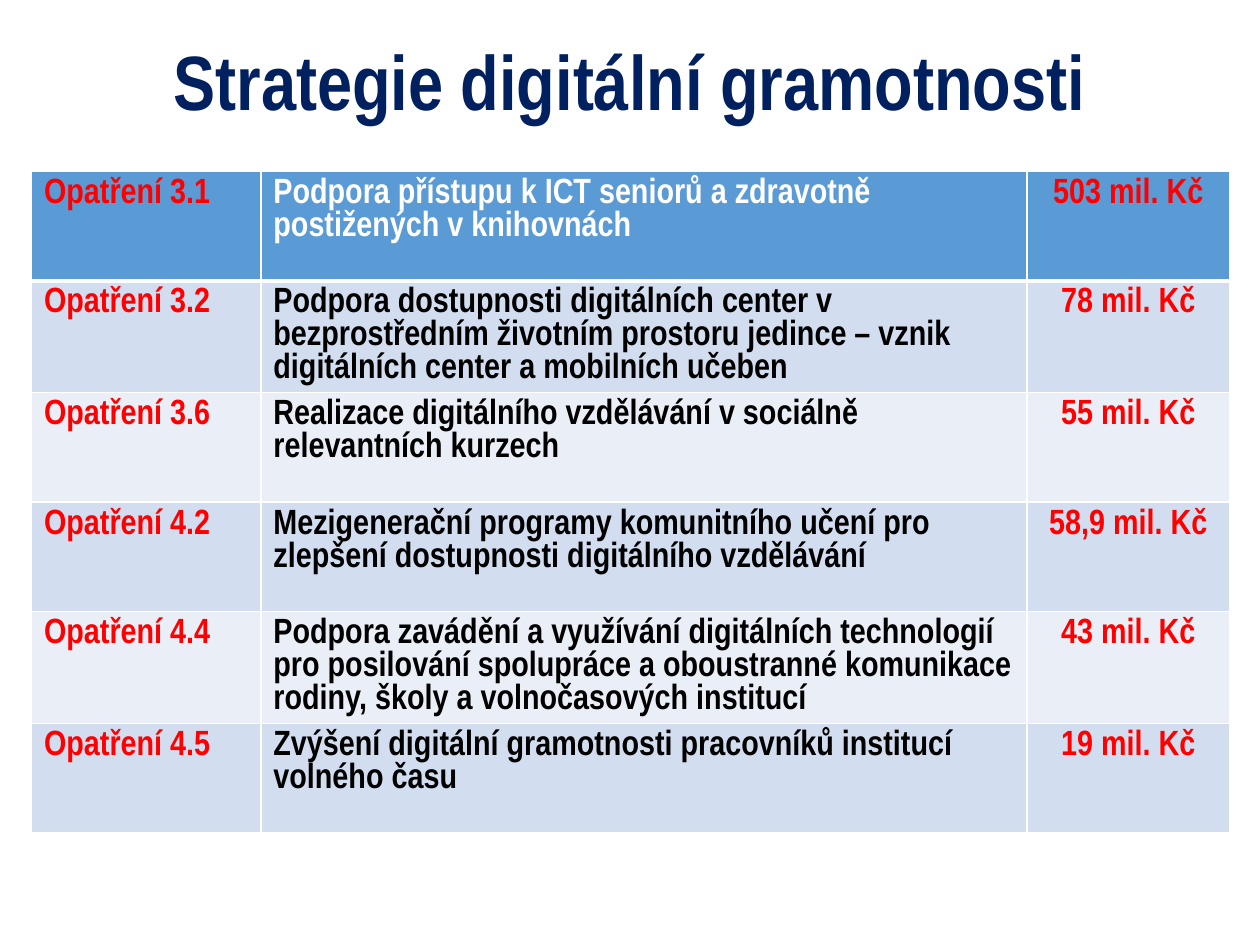
from lxml import etree
from pptx import Presentation
from pptx import util as u
from pptx.dml.color import RGBColor
from pptx.enum import text
from pptx.oxml import ns

WIDTH, HEIGHT = u.Inches(10), u.Inches(7.5)
FONT = "Arial Narrow"
NAVY = RGBColor(0x00, 0x20, 0x60)
RED = RGBColor(0xFF, 0x00, 0x00)
WHITE = RGBColor(0xFF, 0xFF, 0xFF)
BLACK = RGBColor(0x00, 0x00, 0x00)
HEADER = RGBColor(0x5B, 0x9B, 0xD5)
BANDS = (RGBColor(0xEA, 0xEF, 0xF7), RGBColor(0xD2, 0xDE, 0xEF))
COLUMN_SHARES = (0.1914, 0.6393, 0.1693)

TITLE = "Strategie digitální gramotnosti"
MEASURES = (
    ("Opatření 3.1", "Podpora přístupu k ICT seniorů a zdravotně postižených v knihovnách", "503 mil. Kč"),
    ("Opatření 3.2", "Podpora dostupnosti digitálních center v bezprostředním životním prostoru jedince – vznik digitálních center a mobilních učeben", "78 mil. Kč"),
    ("Opatření 3.6", "Realizace digitálního vzdělávání v sociálně relevantních kurzech", "55 mil. Kč"),
    ("Opatření 4.2", "Mezigenerační programy komunitního učení pro zlepšení dostupnosti digitálního vzdělávání", "58,9 mil. Kč"),
    ("Opatření 4.4", "Podpora zavádění a využívání digitálních technologií pro posilování spolupráce a oboustranné komunikace rodiny, školy a volnočasových institucí", "43 mil. Kč"),
    ("Opatření 4.5", "Zvýšení digitální gramotnosti pracovníků institucí volného času", "19 mil. Kč"),
)


def share_box(left, top, width, height):
    """Turn shares of the slide's size into a box of lengths."""
    return int(left * WIDTH), int(top * HEIGHT), int(width * WIDTH), int(height * HEIGHT)


def write(para, words, size, color, align):
    """Add one bold run to an aligned paragraph."""
    para.alignment = align
    span = para.add_run()
    span.text = words
    span.font.name = FONT
    span.font.size = u.Pt(size)
    span.font.bold = True
    span.font.color.rgb = color


def set_borders(cell, widths):
    """Draw white cell borders of the given widths in points, by side."""
    properties = cell._tc.get_or_add_tcPr()
    for side, width in widths.items():
        line = etree.SubElement(properties, ns.qn(f"a:ln{side}"), w=str(u.Pt(width)))
        fill = etree.SubElement(line, ns.qn("a:solidFill"))
        etree.SubElement(fill, ns.qn("a:srgbClr"), val=str(WHITE))


def place_title(page, box):
    """Move the title placeholder into the box and fill it."""
    title = page.shapes.title
    title.left, title.top, title.width, title.height = box
    frame = title.text_frame
    frame.word_wrap = True
    frame.vertical_anchor = text.MSO_ANCHOR.MIDDLE
    para = frame.paragraphs[0]
    para.line_spacing = 0.9
    write(para, TITLE, 44, NAVY, text.PP_ALIGN.CENTER)


def place_measures(page, box):
    """Fill the box with the table of measures and their budgets."""
    table = page.shapes.add_table(len(MEASURES), len(COLUMN_SHARES), *box).table
    for column, share in zip(table.columns, COLUMN_SHARES):
        column.width = int(box[2] * share)
    aligns = (text.PP_ALIGN.LEFT, text.PP_ALIGN.LEFT, text.PP_ALIGN.CENTER)
    for row, measure in enumerate(MEASURES):
        colors = (RED, BLACK if row else WHITE, RED)
        for column, words in enumerate(measure):
            cell = table.cell(row, column)
            set_borders(cell, {"L": 1, "R": 1, "T": 3 if row == 1 else 1, "B": 1 if row else 3})
            cell.fill.solid()
            cell.fill.fore_color.rgb = BANDS[row % 2] if row else HEADER
            write(cell.text_frame.paragraphs[0], words, 20, colors[column], aligns[column])


def main():
    """Build the slide and save it."""
    deck = Presentation()
    deck.slide_width, deck.slide_height = WIDTH, HEIGHT
    page = deck.slides.add_slide(deck.slide_layouts.get_by_name("Title Only"))
    place_title(page, share_box(0.069, 0.032, 0.862, 0.116))
    place_measures(page, share_box(0.025, 0.1813, 0.951, 0.696))
    deck.save("out.pptx")


if __name__ == "__main__":
    main()
